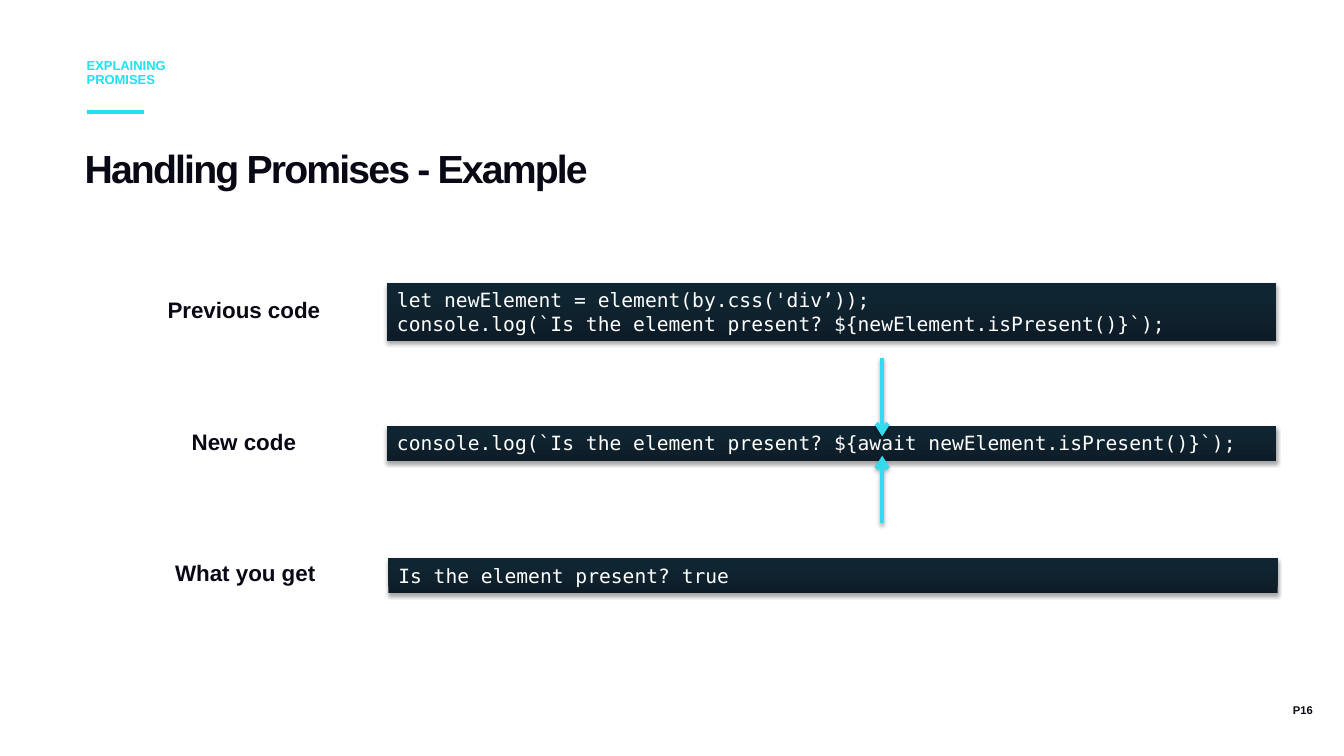
from copy import deepcopy

from lxml import etree
from pptx import Presentation
from pptx import util as u
from pptx.dml.color import RGBColor
from pptx.enum import shapes, text
from pptx.oxml.ns import qn

COLORS = {"ink": "090916", "accent": "1EE2F1", "arrow": "34DBEE", "code": "FFFFFF",
          "low": "0D1C27", "middle": "102532", "high": "102533", "shadow": "000000"}
RGB = {name: RGBColor.from_string(value) for name, value in COLORS.items()}

deck = Presentation()
deck.slide_width, deck.slide_height = u.Inches(13.33), u.Inches(7.5)
page = deck.slides.add_slide(deck.slide_layouts[6])

# Grid of 100 columns by 100 rows
COL, ROW = deck.slide_width / 100, deck.slide_height / 100


def write(box, lines, size, color, font="Arial", bold=True, align=text.PP_ALIGN.LEFT,
          spacing=1.0, inset=True):
    frame = box.text_frame
    frame.word_wrap = True
    frame.vertical_anchor = text.MSO_ANCHOR.TOP
    if not inset:
        frame.margin_left = frame.margin_right = frame.margin_top = frame.margin_bottom = 0
    for index, line in enumerate(lines):
        para = frame.add_paragraph() if index else frame.paragraphs[0]
        para.alignment, para.line_spacing = align, spacing
        span = para.add_run()
        span.text = line
        span.font.name, span.font.size, span.font.bold = font, u.Pt(size), bold
        span.font.color.rgb = RGB[color]
    return span


def add_effects(shape, shadow=True):
    effects = etree.SubElement(shape._element.spPr, qn("a:effectLst"))
    if shadow:
        outer = etree.SubElement(effects, qn("a:outerShdw"), blurRad=str(u.Pt(3.1)),
                                 dist=str(u.Pt(1.8)), dir="5400000", rotWithShape="0")
        tint = etree.SubElement(outer, qn("a:srgbClr"), val=COLORS["shadow"])
        etree.SubElement(tint, qn("a:alpha"), val="35000")


# Section name, title and page number
headings = [
    (6.45, 7.87, 9.45, 7.07, "EXPLAINING PROMISES", 9.3, "accent", text.PP_ALIGN.LEFT, 0.9),
    (6.3, 20.27, 73.07, 13.47, "Handling Promises - Example", 28, "ink", text.PP_ALIGN.LEFT, 0.8),
    (95.35, 92.67, 2.33, 2, "P16", 8, "ink", text.PP_ALIGN.RIGHT, 1.2),
]
for left, top, width, height, words, size, color, align, spacing in headings:
    box = page.shapes.add_textbox(*map(int, (left * COL, top * ROW, width * COL, height * ROW)))
    span = write(box, [words], size, color, align=align, spacing=spacing, inset=False)
    if size == 28:
        span.font._element.set("spc", "-130")

# Labels with their code panels
examples = [
    ("Previous code", 39.07, 37.47, 7.6, 0,
     ["let newElement = element(by.css('div’));",
      "console.log(`Is the element present? ${newElement.isPresent()}`);"]),
    ("New code", 56.53, 56.4, 4.53, 0,
     ["console.log(`Is the element present? ${await newElement.isPresent()}`);"]),
    ("What you get", 73.87, 73.87, 4.53, 0.1, ["Is the element present? true"]),
]
for label, label_top, top, height, shift, code in examples:
    box = page.shapes.add_textbox(int((6.3 + shift) * COL), int(label_top * ROW),
                                  int(23.7 * COL), int(4.4 * ROW))
    write(box, [label], 16, "ink", align=text.PP_ALIGN.CENTER, spacing=u.Pt(16))

    panel = page.shapes.add_shape(shapes.MSO_SHAPE.RECTANGLE, int((28.8 + shift) * COL),
                                  int(top * ROW), int(66.17 * COL), int(height * ROW))
    panel.line.fill.background()
    panel.fill.gradient()
    panel.fill.gradient_angle = 90
    stop_list = panel._element.spPr.find(".//" + qn("a:gsLst"))
    stop_list.append(deepcopy(stop_list[-1]))
    levels = [(0, "low"), (0.8, "middle"), (1, "high")]
    for stop, (position, color) in zip(panel.fill.gradient_stops, levels):
        stop.position, stop.color.rgb = position, RGB[color]
    add_effects(panel)
    write(panel, code, 14, "code", font="DejaVu Sans Mono", bold=False)

# Accent rule and the two arrows towards the new code
lines = [
    (6.45, 14.8, 10.73, 14.8, "accent", False),
    (65.64, 47.33, 65.64, 57.73, "arrow", True),
    (65.64, 69.2, 65.64, 60.27, "arrow", True),
]
for x1, y1, x2, y2, color, is_arrow in lines:
    line = page.shapes.add_connector(shapes.MSO_CONNECTOR.STRAIGHT, int(x1 * COL),
                                     int(y1 * ROW), int(x2 * COL), int(y2 * ROW))
    line.line.width = u.Pt(3)
    line.line.color.rgb = RGB[color]
    if is_arrow:
        etree.SubElement(line.line._get_or_add_ln(), qn("a:tailEnd"), type="arrow")
    add_effects(line, shadow=is_arrow)

deck.save("out.pptx")
